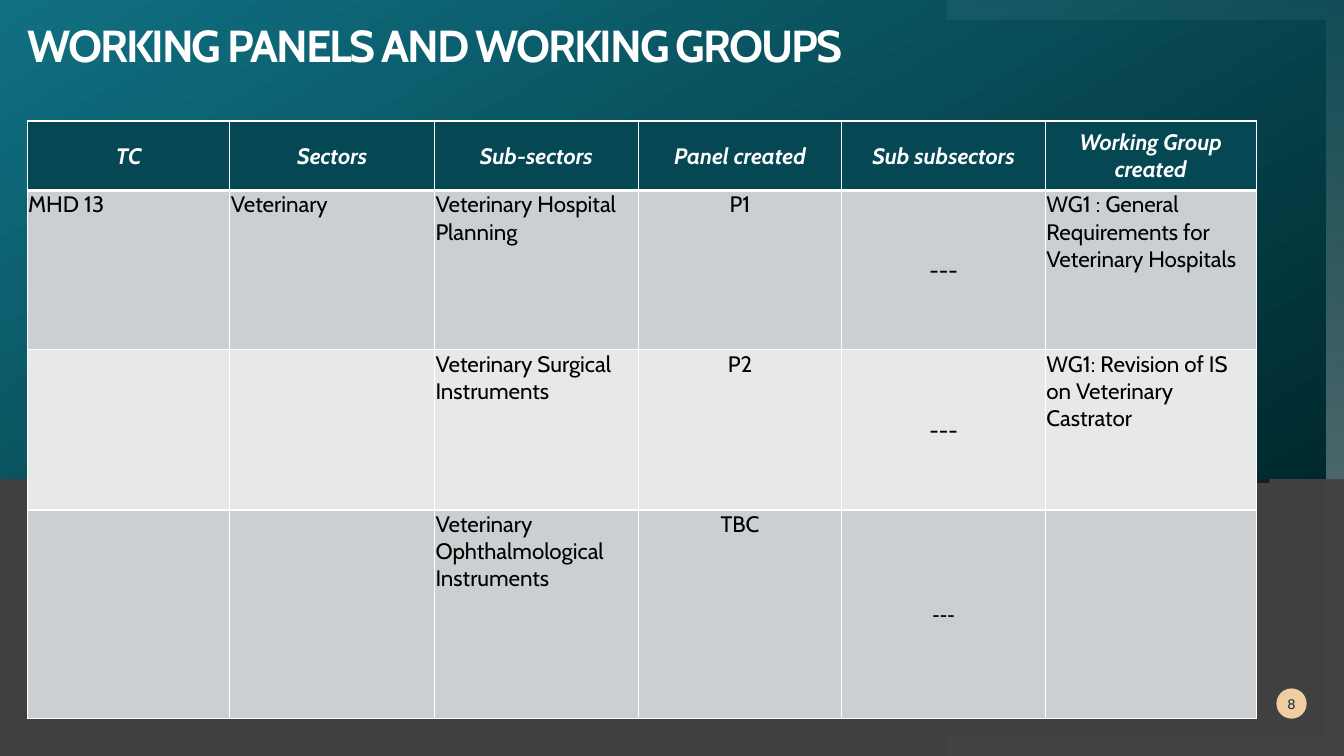
from pptx import Presentation
from pptx.dml.color import RGBColor
from pptx.enum import shapes, text
from pptx.oxml import ns, xmlchemy
from pptx.util import Inches, Pt

WHITE, BLACK, TEAL, DARK_TEAL = "FFFFFF", "000000", "054854", "00292E"
LEFT, CENTER = text.PP_ALIGN.LEFT, text.PP_ALIGN.CENTER
TOP, MIDDLE = text.MSO_ANCHOR.TOP, text.MSO_ANCHOR.MIDDLE
BAND_FILLS = ["CCCFD1", "E7E9E9"]
COLUMN_WIDTHS = [2.01, 2.03, 2.02, 2.02, 2.02, 2.09]
ROW_HEIGHTS = [0.69, 1.58, 1.59, 2.07]
ROWS = [
    ["TC", "Sectors", "Sub-sectors", "Panel created", "Sub subsectors",
     "Working Group created"],
    ["MHD 13", "Veterinary", "Veterinary Hospital Planning", "P1", "---",
     "WG1 : General Requirements for Veterinary Hospitals"],
    ["", "", "Veterinary Surgical Instruments", "P2", "---",
     "WG1: Revision of IS on Veterinary Castrator"],
    ["", "", "Veterinary Ophthalmological Instruments", "TBC", "---", ""],
]
PANEL_COLUMN, SUBSECTOR_COLUMN = 3, 4


def rgb(color):
    return RGBColor.from_string(color)


def add_child(parent, tag, **attributes):
    child = xmlchemy.OxmlElement(tag)
    for name, value in attributes.items():
        child.set(name, str(value))
    parent.append(child)
    return child


def set_opacity(color_element, percent):
    add_child(color_element, "a:alpha", val=percent * 1000)


def fill_solid(shape, color, opacity=100):
    shape.fill.solid()
    shape.fill.fore_color.rgb = rgb(color)
    if opacity < 100:
        set_opacity(next(shape.element.spPr.iter(ns.qn("a:srgbClr"))), opacity)


def fill_gradient(shape, stops, angle):
    """Fill with two (colour, opacity) stops; the angle is counter-clockwise."""
    shape.fill.gradient()
    shape.fill.gradient_angle = angle
    for position, (stop, (color, _)) in enumerate(zip(shape.fill.gradient_stops, stops)):
        stop.color.rgb = rgb(color)
        stop.position = position
    colors = shape.element.spPr.iter(ns.qn("a:srgbClr"))
    for element, (_, opacity) in zip(list(colors), stops):
        set_opacity(element, opacity)


def make_plain(shape):
    shape.shadow.inherit = False
    shape.line.fill.background()
    return shape


def add_preset(slide, kind, left, top, width, height):
    return make_plain(slide.shapes.add_shape(
        kind, Inches(left), Inches(top), Inches(width), Inches(height)))


def add_outline(slide, points):
    start, *others = [(Inches(x), Inches(y)) for x, y in points]
    builder = slide.shapes.build_freeform(*start)
    builder.add_line_segments(others, close=True)
    return make_plain(builder.convert_to_shape())


def write_text(frame, content, size=16, font="Cabin", color=BLACK, bold=False,
               italic=False, align=LEFT, line_spacing=1.0, tracking=0):
    paragraph = frame.paragraphs[0]
    paragraph.alignment = align
    paragraph.line_spacing = line_spacing
    run = paragraph.add_run()
    run.text = content
    run.font.size = Pt(size)
    run.font.name = font
    run.font.color.rgb = rgb(color)
    run.font.bold = bold
    run.font.italic = italic
    if tracking:
        run.font._element.set("spc", str(round(tracking * 100)))


def clear_margins(frame):
    frame.margin_left = frame.margin_top = frame.margin_right = frame.margin_bottom = 0


def set_borders(cell, bottom_width):
    properties = cell._tc.get_or_add_tcPr()
    widths = {"a:lnL": 1, "a:lnR": 1, "a:lnT": 1, "a:lnB": bottom_width}
    for index, (tag, width) in enumerate(widths.items()):
        line = xmlchemy.OxmlElement(tag)
        line.set("w", str(Pt(width)))
        add_child(add_child(line, "a:solidFill"), "a:srgbClr", val=WHITE)
        properties.insert(index, line)


def add_background(slide):
    slide.background.fill.solid()
    slide.background.fill.fore_color.rgb = rgb("404040")
    rectangle = shapes.MSO_SHAPE.RECTANGLE
    fill_solid(add_preset(slide, rectangle, 0.74, 4.74, 11.85, 0.05), BLACK, 56)
    fill_gradient(add_preset(slide, rectangle, 0, 0, 13.33, 4.75),
                  [(DARK_TEAL, 100), ("107082", 100)], 120)
    upper_corner = [(9.4, 0), (13.33, 0), (13.33, 4.75), (13.14, 4.75),
                    (13.14, 0.2), (9.4, 0.2)]
    fill_gradient(add_outline(slide, upper_corner), [(WHITE, 5), (WHITE, 30)], 270)
    lower_corner = [(13.14, 4.75), (13.33, 4.75), (13.33, 7.5), (9.4, 7.5),
                    (9.4, 7.3), (13.14, 7.3)]
    fill_solid(add_outline(slide, lower_corner), "808080", 5)


def add_page_number(slide, number):
    badge = add_preset(slide, shapes.MSO_SHAPE.OVAL, 12.66, 6.83, 0.3, 0.3)
    fill_solid(badge, "F0CDA1")
    clear_margins(badge.text_frame)
    badge.text_frame.vertical_anchor = MIDDLE
    write_text(badge.text_frame, number, size=10, font="Arial", color=DARK_TEAL,
               align=CENTER)


def fill_cell(cell, content, row, column):
    header = row == 0
    cell.fill.solid()
    cell.fill.fore_color.rgb = rgb(TEAL if header else BAND_FILLS[(row - 1) % 2])
    set_borders(cell, 3 if header else 1)
    cell.margin_left = cell.margin_top = cell.margin_right = Inches(0.01)
    cell.margin_bottom = 0
    cell.vertical_anchor = MIDDLE if header or column == SUBSECTOR_COLUMN else TOP
    if content:
        centered = header or column in (PANEL_COLUMN, SUBSECTOR_COLUMN)
        last_dashes = row == len(ROWS) - 1 and column == SUBSECTOR_COLUMN
        write_text(cell.text_frame, content, font="Arial" if last_dashes else "Cabin",
                   color=WHITE if header else BLACK, bold=header, italic=header,
                   align=CENTER if centered else LEFT)


def add_panel_table(slide):
    table = slide.shapes.add_table(
        len(ROWS), len(COLUMN_WIDTHS), Inches(0.27), Inches(1.2),
        Inches(sum(COLUMN_WIDTHS)), Inches(sum(ROW_HEIGHTS))).table
    for column, width in zip(table.columns, COLUMN_WIDTHS):
        column.width = Inches(width)
    for row, height in zip(table.rows, ROW_HEIGHTS):
        row.height = Inches(height)
    for row, contents in enumerate(ROWS):
        for column, content in enumerate(contents):
            fill_cell(table.cell(row, column), content, row, column)


def place_title(slide, content):
    title = slide.shapes.title
    title.left, title.top = Inches(0.27), Inches(0.24)
    title.width, title.height = Inches(12.69), Inches(0.96)
    frame = title.text_frame
    clear_margins(frame)
    frame.vertical_anchor = TOP
    frame.auto_size = text.MSO_AUTO_SIZE.NONE
    write_text(frame, content, size=32, color=WHITE, bold=True, line_spacing=0.9,
               tracking=-1.5)
    slide.shapes._spTree.append(title.element)


def main():
    presentation = Presentation()
    presentation.slide_width, presentation.slide_height = Inches(13.33), Inches(7.5)
    slide = presentation.slides.add_slide(presentation.slide_layouts[5])
    add_background(slide)
    add_page_number(slide, "8")
    add_panel_table(slide)
    place_title(slide, "WORKING PANELS AND WORKING GROUPS")
    presentation.save("out.pptx")


if __name__ == "__main__":
    main()
